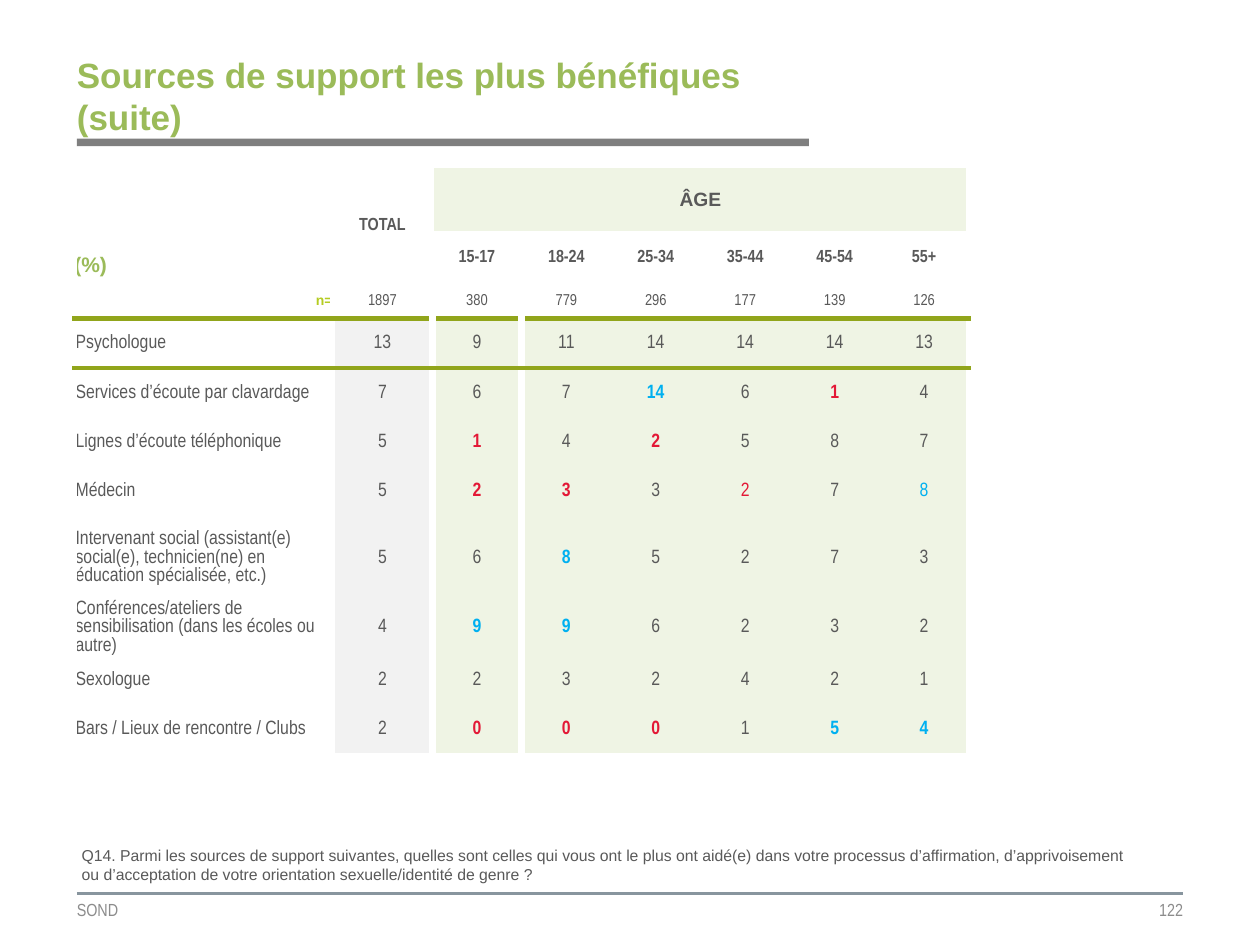
import dataclasses
import typing

import lxml.etree
import pptx
import pptx.dml.color
import pptx.enum.shapes
import pptx.enum.text
import pptx.oxml.ns
import pptx.util

RGB = pptx.dml.color.RGBColor
ALIGN = pptx.enum.text.PP_ALIGN
ANCHOR = pptx.enum.text.MSO_ANCHOR
qn = pptx.oxml.ns.qn

GREEN = RGB(0x9B, 0xBB, 0x59)
LIME = RGB(0xB5, 0xCC, 0x22)
OLIVE = RGB(0x91, 0xA5, 0x1B)
PALE_GREEN = RGB(0xEF, 0xF4, 0xE4)
PALE_GRAY = RGB(0xF2, 0xF2, 0xF2)
TITLE_BAR_GRAY = RGB(0x7F, 0x7F, 0x7F)
FOOTER_RULE_GRAY = RGB(0x88, 0x95, 0x9E)
FOOTER_GRAY = RGB(0x8C, 0x8C, 0x8C)
TEXT_GRAY = RGB(0x59, 0x59, 0x59)
WHITE = RGB(0xFF, 0xFF, 0xFF)
BLUE = RGB(0x00, 0xB0, 0xF0)
RED = RGB(0xE3, 0x18, 0x36)

NARROW = "Arial Narrow"
PLAIN_TABLE_STYLE = "{2D5ABB26-0587-4C30-8999-92F81FD0307C}"
SLIDE_WIDTH = pptx.util.Inches(10)
SLIDE_HEIGHT = pptx.util.Inches(7.5)


@dataclasses.dataclass(frozen=True)
class Place:
    """Percentages of the slide's width and height."""
    left: float
    top: float
    width: float
    height: float

    def box(self) -> tuple[int, int, int, int]:
        return across(self.left), down(self.top), across(self.width), down(self.height)


class Score(typing.NamedTuple):
    value: int
    color: RGB = TEXT_GRAY
    bold: bool = False


class Source(typing.NamedTuple):
    label: str
    total: int
    scores: tuple
    height: float = 5.2


class AgeGroup(typing.NamedTuple):
    label: str
    respondents: int


def high(value: int, bold: bool = True) -> Score:
    return Score(value, BLUE, bold)


def low(value: int, bold: bool = True) -> Score:
    return Score(value, RED, bold)


AGES = (AgeGroup("15-17", 380), AgeGroup("18-24", 779), AgeGroup("25-34", 296),
        AgeGroup("35-44", 177), AgeGroup("45-54", 139), AgeGroup("55+", 126))
SOURCES = (
    Source("Psychologue", 13, (9, 11, 14, 14, 14, 13)),
    Source("Services d’écoute par clavardage", 7, (6, 7, high(14), 6, low(1), 4)),
    Source("Lignes d’écoute téléphonique", 5, (low(1), 4, low(2), 5, 8, 7)),
    Source("Médecin", 5, (low(2), low(3), 3, low(2, False), 7, high(8, False))),
    Source("Intervenant social (assistant(e) social(e), technicien(ne) en éducation spécialisée, etc.)",
           5, (6, high(8), 5, 2, 7, 3), 8.93),
    Source("Conférences/ateliers de sensibilisation (dans les écoles ou autre)",
           4, (high(9), high(9), 6, 2, 3, 2), 5.87),
    Source("Sexologue", 2, (2, 3, 2, 4, 2, 1)),
    Source("Bars / Lieux de rencontre / Clubs", 2, (low(0), low(0), low(0), 1, high(5), high(4))),
)
HEADER_HEIGHTS = (4.27, 2.4, 5.6, 3.73)
COLUMN_WIDTHS = (20.5, 7.9) + (7.1,) * len(AGES)


def across(percent: float) -> int:
    return round(SLIDE_WIDTH * percent / 100)


def down(percent: float) -> int:
    return round(SLIDE_HEIGHT * percent / 100)


def write_text(frame, text: str, *, size: float, font: str = "Arial", color: RGB = TEXT_GRAY,
               bold: bool = False, align=ALIGN.LEFT, spacing: float | None = None) -> None:
    paragraph = frame.paragraphs[0]
    paragraph.alignment = align
    if spacing:
        paragraph.line_spacing = spacing
    run = paragraph.add_run()
    run.text = text
    run.font.size = pptx.util.Pt(size)
    run.font.name = font
    run.font.bold = bold
    run.font.color.rgb = color


def prepare_frame(frame, anchor=ANCHOR.MIDDLE, inset: float = 0) -> None:
    frame.word_wrap = True
    frame.auto_size = pptx.enum.text.MSO_AUTO_SIZE.NONE
    frame.vertical_anchor = anchor
    frame.margin_left = frame.margin_right = pptx.util.Inches(inset)
    frame.margin_top = frame.margin_bottom = pptx.util.Inches(inset / 2)


def add_text(slide, place: Place, text: str, anchor=ANCHOR.MIDDLE, inset: float = 0, **style) -> None:
    frame = slide.shapes.add_textbox(*place.box()).text_frame
    prepare_frame(frame, anchor, inset)
    write_text(frame, text, **style)


def add_border(cell, side: str, color: RGB, points: float) -> None:
    border = lxml.etree.SubElement(cell._tc.get_or_add_tcPr(), qn("a:ln" + side),
                                   w=str(pptx.util.Pt(points)))
    fill = lxml.etree.SubElement(border, qn("a:solidFill"))
    lxml.etree.SubElement(fill, qn("a:srgbClr"), val=str(color))


def style_cell(cell, row: int, column: int) -> None:
    body = row >= len(HEADER_HEIGHTS)
    if column < 3 or not body:
        add_border(cell, "L", WHITE, 4.5 if body and column == 2 else 3)
    if column < 2 or column == len(COLUMN_WIDTHS) - 1 or not body:
        add_border(cell, "R", WHITE, 4.5 if body and column == 1 else 3)
    if row == len(HEADER_HEIGHTS):
        add_border(cell, "T", OLIVE, 3)
    if row == len(HEADER_HEIGHTS) - 1:
        add_border(cell, "B", OLIVE, 3)
    if column >= 2 and (body or row < 2):
        cell.fill.solid()
        cell.fill.fore_color.rgb = PALE_GREEN
    elif column == 1 and body:
        cell.fill.solid()
        cell.fill.fore_color.rgb = PALE_GRAY
    else:
        cell.fill.background()
    cell.vertical_anchor = ANCHOR.MIDDLE
    cell.margin_left = cell.margin_right = cell.margin_top = pptx.util.Inches(0.01)
    cell.margin_bottom = 0
    cell.text_frame.paragraphs[0]._p.get_or_add_endParaRPr().set("sz", "800")


def add_results(slide) -> None:
    heights = HEADER_HEIGHTS + tuple(source.height for source in SOURCES)
    place = Place(5.9, 17.73, sum(COLUMN_WIDTHS), sum(heights))
    table = slide.shapes.add_table(len(heights), len(COLUMN_WIDTHS), *place.box()).table
    table.first_row = table.horz_banding = False
    table._tbl.tblPr.find(qn("a:tableStyleId")).text = PLAIN_TABLE_STYLE
    for column, width in zip(table.columns, COLUMN_WIDTHS):
        column.width = across(width)
    for row, height in zip(table.rows, heights):
        row.height = down(height)
    for row in range(len(heights)):
        for column in range(len(COLUMN_WIDTHS)):
            style_cell(table.cell(row, column), row, column)
    table.cell(0, 1).merge(table.cell(2, 1))
    table.cell(0, 2).merge(table.cell(1, len(COLUMN_WIDTHS) - 1))
    table.cell(1, 0).merge(table.cell(2, 0))

    def fill_cell(row: int, column: int, text, **style) -> None:
        write_text(table.cell(row, column).text_frame, str(text),
                   **{"font": NARROW, "align": ALIGN.CENTER, **style})

    for row in (1, 3):
        corner = table.cell(row, 0)
        corner.margin_left = corner.margin_right = 0
        corner.margin_top = corner.margin_bottom = pptx.util.Inches(0.05)
    table.cell(1, 0).vertical_anchor = ANCHOR.BOTTOM
    fill_cell(1, 0, "(%)", size=12, font="Arial", color=GREEN, bold=True, align=ALIGN.LEFT, spacing=0.95)
    fill_cell(3, 0, "n=", size=8, font="Arial", color=LIME, bold=True, align=ALIGN.RIGHT, spacing=0.95)
    fill_cell(0, 1, "TOTAL", size=10, bold=True)
    fill_cell(3, 1, 1897, size=9)
    fill_cell(0, 2, "ÂGE", size=11, font="Arial", bold=True)
    for column, age in enumerate(AGES, 2):
        fill_cell(2, column, age.label, size=10, bold=True)
        fill_cell(3, column, age.respondents, size=9)
    for row, source in enumerate(SOURCES, len(HEADER_HEIGHTS)):
        fill_cell(row, 0, source.label, size=11, align=ALIGN.LEFT)
        for column, entry in enumerate((source.total, *source.scores), 1):
            score = entry if isinstance(entry, Score) else Score(entry)
            fill_cell(row, column, score.value, size=11, color=score.color, bold=score.bold)


def add_rules(slide) -> None:
    title_bar = slide.shapes.add_shape(pptx.enum.shapes.MSO_SHAPE.RECTANGLE,
                                       *Place(6.1, 14.67, 58.1, 0.8).box())
    title_bar.shadow.inherit = False
    title_bar.fill.solid()
    title_bar.fill.fore_color.rgb = TITLE_BAR_GRAY
    title_bar.line.fill.background()
    footer_rule = slide.shapes.add_connector(pptx.enum.shapes.MSO_CONNECTOR.STRAIGHT, across(6.1),
                                             down(94.53), across(93.9), down(94.53))
    footer_rule.line.color.rgb = FOOTER_RULE_GRAY
    footer_rule.line.width = pptx.util.Pt(1.5)
    lxml.etree.SubElement(footer_rule._element.spPr, qn("a:effectLst"))


def main() -> None:
    deck = pptx.Presentation()
    deck.slide_width, deck.slide_height = SLIDE_WIDTH, SLIDE_HEIGHT
    slide = deck.slides.add_slide(deck.slide_layouts[5])
    title = slide.shapes.title
    title.left, title.top, title.width, title.height = Place(6.1, 5.47, 58.1, 9.2).box()
    prepare_frame(title.text_frame)
    write_text(title.text_frame, "Sources de support les plus bénéfiques (suite)",
               size=20, color=GREEN, bold=True)
    add_rules(slide)
    add_results(slide)
    add_text(slide, Place(5.5, 88.8, 85.5, 5.33),
             "Q14. Parmi les sources de support suivantes, quelles sont celles qui vous ont le plus ont "
             "aidé(e) dans votre processus d’affirmation, d’apprivoisement ou d’acceptation de votre "
             "orientation sexuelle/identité de genre ?", anchor=ANCHOR.TOP, inset=0.1, size=9)
    footer = {"size": 10, "font": NARROW, "color": FOOTER_GRAY}
    add_text(slide, Place(6.1, 94.53, 28, 3.47), "SOND", **footer)
    add_text(slide, Place(65.5, 94.53, 28.4, 3.47), "122", align=ALIGN.RIGHT, **footer)
    deck.save("out.pptx")


if __name__ == "__main__":
    main()
